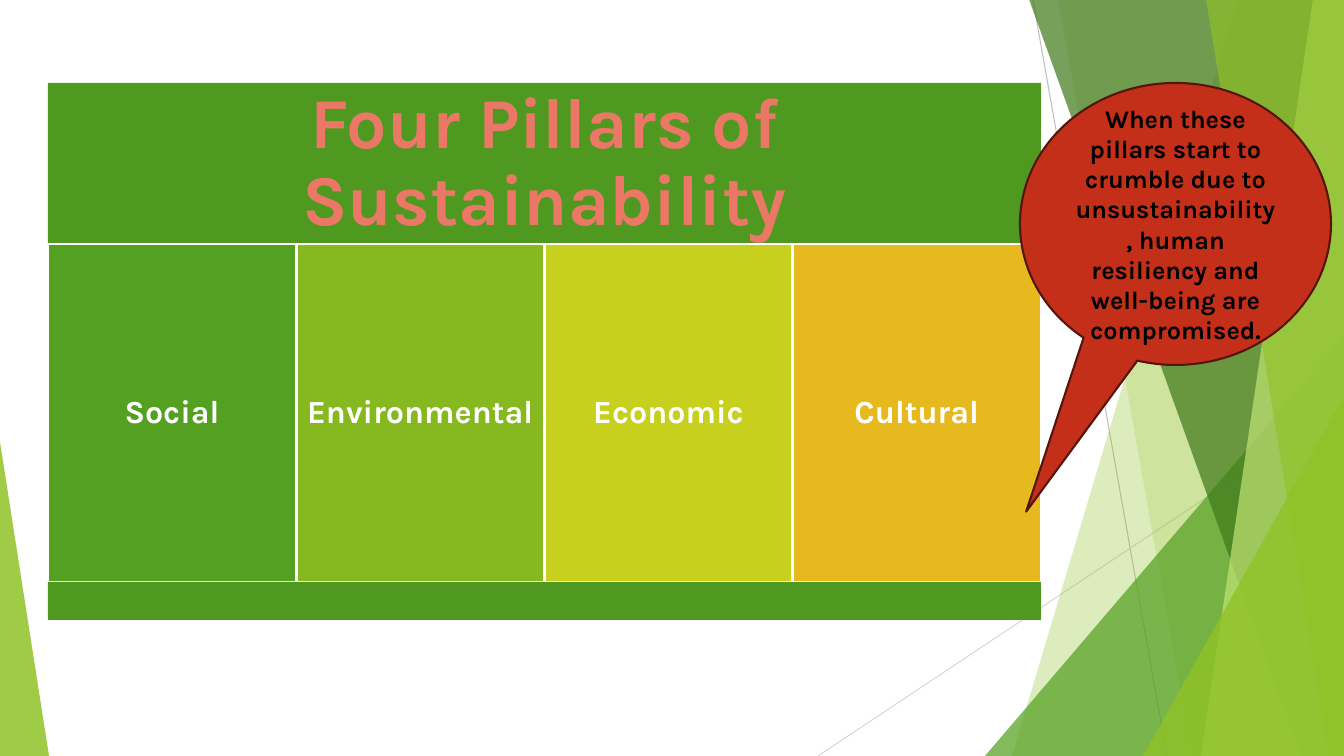
from lxml.etree import SubElement
from pptx import Presentation
from pptx.dml.color import RGBColor
from pptx.enum.shapes import MSO_CONNECTOR, MSO_SHAPE
from pptx.enum.text import MSO_ANCHOR, PP_ALIGN
from pptx.oxml.ns import qn
from pptx.util import Pt

PX = 914400 / 100.8
WIDTH, HEIGHT = 1344, 756
FONT = "Karla"

TITLE = "Four Pillars of Sustainability"
PILLARS = [
    ("Social", "54A021"),
    ("Environmental", "86B820"),
    ("Economic", "C7D01D"),
    ("Cultural", "E6B91E"),
]
WARNING = ("When these pillars start to crumble due to unsustainability, "
           "human resiliency and well-being are compromised.")

# start, end, colour
RAYS = [
    ((1033, 0), (1167, HEIGHT), "BFBFBF"),
    ((WIDTH, 406), (818, HEIGHT), "D9D9D9"),
]
# Bands run from a slanted left edge to the right side: top x, bottom x, colour, opacity
# Triangles: left, top, width, apex position, colour, opacity
FACETS = [
    ("band", (1238, 1012), "90C226", 30),
    ("band", (1058, 1192), "90C226", 20),
    ("triangle", (985, 336, 359, 1), "54A021", 72),
    ("band", (1029, 1301), "3F7819", 70),
    ("band", (1313, 1201), "C0E474", 70),
    ("band", (1206, 1329), "90C226", 65),
    ("triangle", (1143, 396, 201, 1), "90C226", 80),
    ("triangle", (0, 442, 49, 0), "90C226", 85),
]

BOARD_LEFT, BOARD_TOP, BOARD_WIDTH = 48, 83, 993
TITLE_HEIGHT, PILLAR_HEIGHT, BASE_HEIGHT = 161, 338, 38
BOARD_COLOR = "509920"


def emu(px):
    return round(px * PX)


def rgb(color):
    return RGBColor.from_string(color)


def paint(shape, color, opacity=100, line=None, line_width=1):
    shape.shadow.inherit = False
    shape.fill.solid()
    shape.fill.fore_color.rgb = rgb(color)
    if opacity < 100:
        solid = shape._element.spPr.find(qn("a:solidFill"))
        SubElement(solid[0], qn("a:alpha"), val=str(opacity * 1000))
    if line:
        shape.line.color.rgb = rgb(line)
        shape.line.width = Pt(line_width)
    else:
        shape.line.fill.background()


def add_preset(page, kind, left, top, width, height):
    return page.shapes.add_shape(kind, emu(left), emu(top), emu(width), emu(height))


def write(shape, text, size, color, inset, spacing=None):
    frame = shape.text_frame
    frame.word_wrap = True
    frame.vertical_anchor = MSO_ANCHOR.MIDDLE
    frame.margin_left = frame.margin_right = emu(inset)
    frame.margin_top = frame.margin_bottom = emu(inset / 2)
    frame.text = text
    para = frame.paragraphs[0]
    para.alignment = PP_ALIGN.CENTER
    if spacing:
        para.line_spacing = spacing
    font = para.runs[0].font
    font.name, font.size, font.bold = FONT, Pt(size), True
    font.color.rgb = rgb(color)


def add_backdrop(page):
    for start, end, color in RAYS:
        ray = page.shapes.add_connector(
            MSO_CONNECTOR.STRAIGHT, *map(emu, start + end))
        ray.line.color.rgb = rgb(color)
        ray.line.width = Pt(0.75)
        SubElement(ray._element.spPr, qn("a:effectLst"))
    for kind, place, color, opacity in FACETS:
        if kind == "band":
            top_x, bottom_x = place
            outline = page.shapes.build_freeform(top_x, -1, scale=PX)
            outline.add_line_segments(
                [(WIDTH, -1), (WIDTH, HEIGHT), (bottom_x, HEIGHT)], close=True)
            facet = outline.convert_to_shape()
        else:
            left, top, width, apex = place
            facet = add_preset(page, MSO_SHAPE.ISOSCELES_TRIANGLE,
                               left, top, width, HEIGHT - top)
            facet.adjustments[0] = apex
        paint(facet, color, opacity)


def add_board(page):
    header = add_preset(page, MSO_SHAPE.RECTANGLE,
                        BOARD_LEFT, BOARD_TOP, BOARD_WIDTH, TITLE_HEIGHT)
    paint(header, BOARD_COLOR)
    write(header, TITLE, 51, "EB7766", 21, 0.9)

    pillar_top = BOARD_TOP + TITLE_HEIGHT
    pillar_width = BOARD_WIDTH / len(PILLARS)
    for index, (name, color) in enumerate(PILLARS):
        pillar = add_preset(page, MSO_SHAPE.RECTANGLE,
                            BOARD_LEFT + index * pillar_width, pillar_top,
                            pillar_width, PILLAR_HEIGHT)
        paint(pillar, color, line="FFFFFF", line_width=2)
        write(pillar, name, 23, "FFFFFF", 9, 0.9)

    base = add_preset(page, MSO_SHAPE.RECTANGLE, BOARD_LEFT,
                      pillar_top + PILLAR_HEIGHT, BOARD_WIDTH, BASE_HEIGHT)
    paint(base, BOARD_COLOR)


def add_warning(page):
    callout = add_preset(page, MSO_SHAPE.OVAL_CALLOUT, 1020, 83, 311, 282)
    callout.adjustments[0] = -0.48
    callout.adjustments[1] = 1.02
    paint(callout, "C42F1A", line="56150B", line_width=1.5)
    write(callout, WARNING, 18, "000000", 10)


def main():
    deck = Presentation()
    deck.slide_width, deck.slide_height = emu(WIDTH), emu(HEIGHT)
    page = deck.slides.add_slide(deck.slide_layouts[6])
    add_backdrop(page)
    add_board(page)
    add_warning(page)
    deck.save("out.pptx")


if __name__ == "__main__":
    main()
